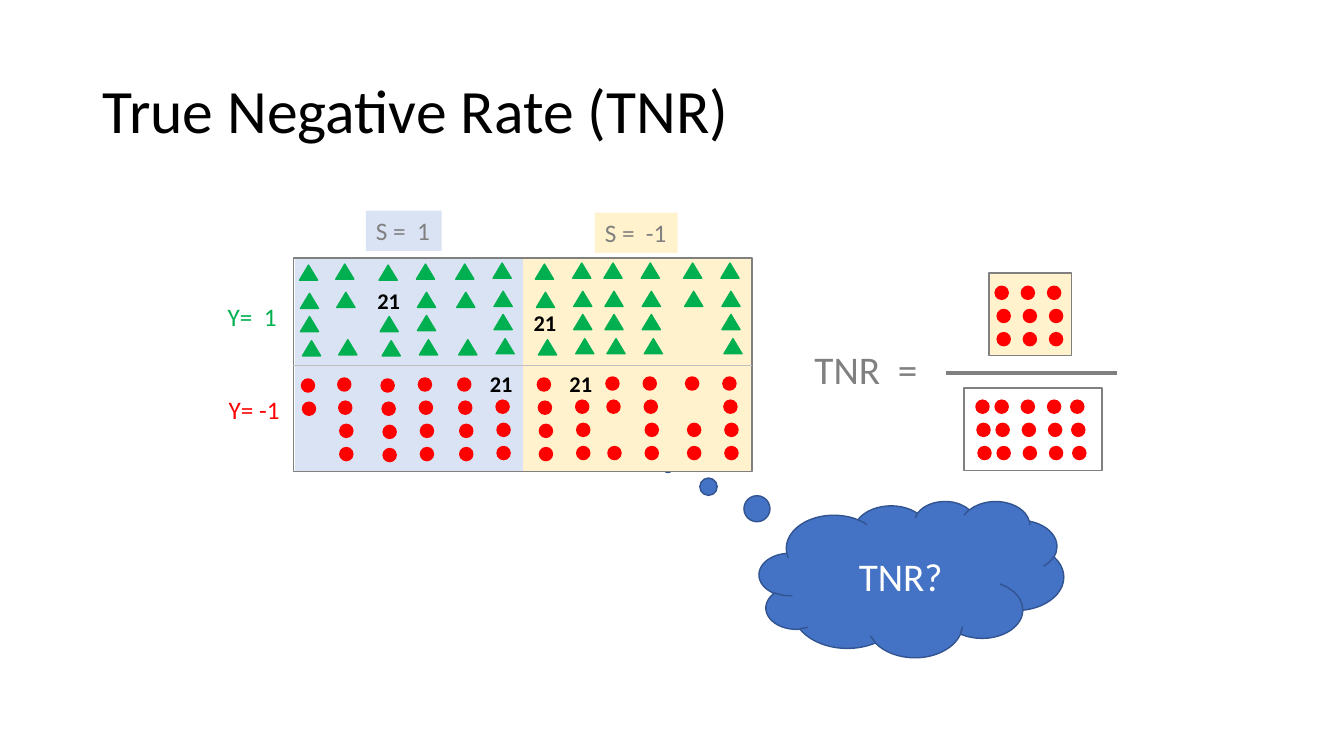
from dataclasses import dataclass

from lxml.etree import SubElement
from pptx import Presentation
from pptx.dml.color import RGBColor
from pptx.enum.shapes import MSO_CONNECTOR, MSO_SHAPE as Preset
from pptx.enum.text import MSO_ANCHOR as Anchor, MSO_AUTO_SIZE as AutoSize, PP_ALIGN as Align
from pptx.oxml.ns import qn
from pptx.util import Inches, Pt

# Content: one character per column; T triangle, o dot, # count label, . empty
TITLE = "True Negative Rate (TNR)"
QUESTION = "TNR?"
FORMULA = "TNR  ="
COUNT = "21"
POSITIVES = ["TTTTTTTTTTTT",
             "TT#TTTTTTTTT",
             "T.TT.T#TTT.T",
             "TTTTTTTTTT.T"]
NEGATIVES = ["ooooo#o#oooo",
             "oooooooooo.o",
             ".ooooooo.ooo",
             ".ooooooooooo"]
TRUE_NEGATIVES = ["ooo"] * 3
ALL_NEGATIVES = ["ooooo"] * 3


@dataclass(frozen=True)
class Theme:
    font: str = "Calibri"
    black: str = "000000"
    white: str = "FFFFFF"
    gray: str = "808080"
    divider: str = "BFBFBF"
    green: str = "00B050"
    red: str = "FF0000"
    blue: str = "4472C4"
    blue_edge: str = "325491"
    group_a: str = "DAE3F3"
    group_b: str = "FFF2CC"
    title: int = 44
    large: int = 28
    label: int = 18
    count: int = 16


THEME = Theme()

# Grid, in inches
SLIDE = (13.33, 7.5)
LEFT, TOP, WIDTH, HEIGHT = 2.91, 2.56, 4.55, 2.12
HALF = 2.26
COLUMNS = [2.97, 3.33, 3.76, 4.13, 4.52, 4.89, 5.31, 5.68, 5.99, 6.36, 6.78, 7.15]
COLUMN_TOPS = [2.63, 2.62, 2.63] + [2.62] * 2 + [2.61, 2.62] + [2.61] * 5
TRIANGLE_ROWS = [(0, 0), (0.01, 0.28), (0.01, 0.51), (0.03, 0.75)]
DOT_ROWS = [(0.02, 1.13), (0.03, 1.36), (0.04, 1.59), (0.04, 1.82)]
FRACTION_COLUMNS = [9.68, 9.87, 10.13, 10.39, 10.62]
FRACTION_PITCH = 0.23
TRIANGLE_SIZE = (0.18, 0.15)
DOT_SIZE = (0.13, 0.13)
COUNT_SIZE = (0.43, 0.37)


def color(value):
    return RGBColor.from_string(value)


def write(shape, text, size, ink, bold=False, align=Align.LEFT):
    paragraph = shape.text_frame.paragraphs[0]
    paragraph.text = text
    paragraph.alignment = align
    font = paragraph.font
    font.name, font.size, font.bold = THEME.font, Pt(size), bold
    font.color.rgb = color(ink)
    return paragraph


def fit_frame(shape):
    frame = shape.text_frame
    frame.word_wrap = False
    frame.auto_size = AutoSize.SHAPE_TO_FIT_TEXT
    frame.vertical_anchor = Anchor.TOP


def add_preset(shapes, preset, box, fill=None, line=None):
    shape = shapes.add_shape(preset, *map(Inches, box))
    shape.shadow.inherit = False
    if fill:
        shape.fill.solid()
        shape.fill.fore_color.rgb = color(fill)
    else:
        shape.fill.background()
    if line:
        shape.line.color.rgb = color(line)
        shape.line.width = Pt(1)
    else:
        shape.line.fill.background()
    return shape


def add_label(shapes, box, text, size, ink, bold=False):
    label = shapes.add_textbox(*map(Inches, box))
    write(label, text, size, ink, bold)
    fit_frame(label)


def add_rule(shapes, left, top, width, ink, weight):
    rule = shapes.add_connector(MSO_CONNECTOR.STRAIGHT, Inches(left), Inches(top),
                                Inches(left + width), Inches(top))
    rule.line.color.rgb = color(ink)
    rule.line.width = Pt(weight)
    SubElement(rule._element.spPr, qn("a:effectLst"))


def add_marks(shapes, pattern, columns, tops, rows):
    """Draw a pattern; each row gives its shift right and down from the column's start."""
    for marks, (shift, drop) in zip(pattern, rows):
        size = TRIANGLE_SIZE if "T" in marks else DOT_SIZE
        for mark, left, top in zip(marks, columns, tops):
            x, y = left + shift, top + drop
            if mark == "T":
                add_preset(shapes, Preset.ISOSCELES_TRIANGLE, (x, y, *size), THEME.green, THEME.green)
            elif mark == "o":
                add_preset(shapes, Preset.OVAL, (x, y, *size), THEME.red, THEME.red)
            elif mark == "#":
                corner = (x + (size[0] - COUNT_SIZE[0]) / 2, y + (size[1] - COUNT_SIZE[1]) / 2)
                add_label(shapes, (*corner, *COUNT_SIZE), COUNT, THEME.count, THEME.black, True)


def add_fraction_part(slide, box, fill, pattern, columns, top, shifts):
    shapes = slide.shapes.add_group_shape().shapes
    add_preset(shapes, Preset.RECTANGLE, box, fill, THEME.gray)
    rows = [(shift, row * FRACTION_PITCH) for row, shift in enumerate(shifts)]
    add_marks(shapes, pattern, columns, [top] * len(columns), rows)


def add_formula(slide):
    add_label(slide.shapes, (7.98, 3.38, 1.24, 0.57), FORMULA, THEME.large, THEME.gray)
    add_rule(slide.shapes, 9.38, 3.7, 1.7, THEME.gray, 2.25)
    add_fraction_part(slide, (9.81, 2.71, 0.82, 0.82), THEME.group_b, TRUE_NEGATIVES,
                      FRACTION_COLUMNS[1:4], 2.84, (0, 0.02, 0.02))
    add_fraction_part(slide, (9.56, 3.85, 1.37, 0.82), None, ALL_NEGATIVES,
                      FRACTION_COLUMNS, 3.97, (0, 0.01, 0.02))


def add_cloud(slide):
    cloud = add_preset(slide.shapes, Preset.CLOUD_CALLOUT, (7.53, 4.97, 3.02, 1.55),
                       THEME.blue, THEME.blue_edge)
    cloud.adjustments[0], cloud.adjustments[1] = -0.8, -0.71
    cloud.text_frame.vertical_anchor = Anchor.MIDDLE
    write(cloud, QUESTION, THEME.large, THEME.white, align=Align.CENTER)


def add_population(slide):
    shapes = slide.shapes.add_group_shape().shapes
    for half, fill in enumerate((THEME.group_a, THEME.group_b)):
        add_preset(shapes, Preset.RECTANGLE, (2.93 + half * HALF, TOP, HALF, HEIGHT), fill, fill)
    add_preset(shapes, Preset.RECTANGLE, (LEFT, TOP, WIDTH, HEIGHT), line=THEME.gray)
    add_rule(shapes, LEFT, TOP + HEIGHT / 2, WIDTH, THEME.divider, 0.5)
    add_marks(shapes, POSITIVES, COLUMNS, COLUMN_TOPS, TRIANGLE_ROWS)
    add_marks(shapes, NEGATIVES, COLUMNS, COLUMN_TOPS, DOT_ROWS)
    for box, text, ink in (((2.16, 2.94, 0.69, 0.4), "Y=  1", THEME.green),
                           ((2.17, 3.86, 0.71, 0.4), "Y= -1", THEME.red)):
        add_label(shapes, box, text, THEME.label, ink)
    for box, text, fill in (((3.63, 2.09, 0.75, 0.4), "S =  1", THEME.group_a),
                            ((5.9, 2.11, 0.82, 0.4), "S =  -1", THEME.group_b)):
        header = add_preset(shapes, Preset.RECTANGLE, box, fill)
        write(header, text, THEME.label, THEME.gray)
        fit_frame(header)


def main():
    presentation = Presentation()
    presentation.slide_width, presentation.slide_height = map(Inches, SLIDE)
    slide = presentation.slides.add_slide(presentation.slide_layouts[5])
    title = slide.shapes.title
    title.left, title.top, title.width, title.height = map(Inches, (0.92, 0.4, 11.5, 1.45))
    title.text_frame.vertical_anchor = Anchor.MIDDLE
    write(title, TITLE, THEME.title, THEME.black).line_spacing = 0.9
    add_formula(slide)
    add_cloud(slide)
    add_population(slide)
    presentation.save("out.pptx")


if __name__ == "__main__":
    main()
